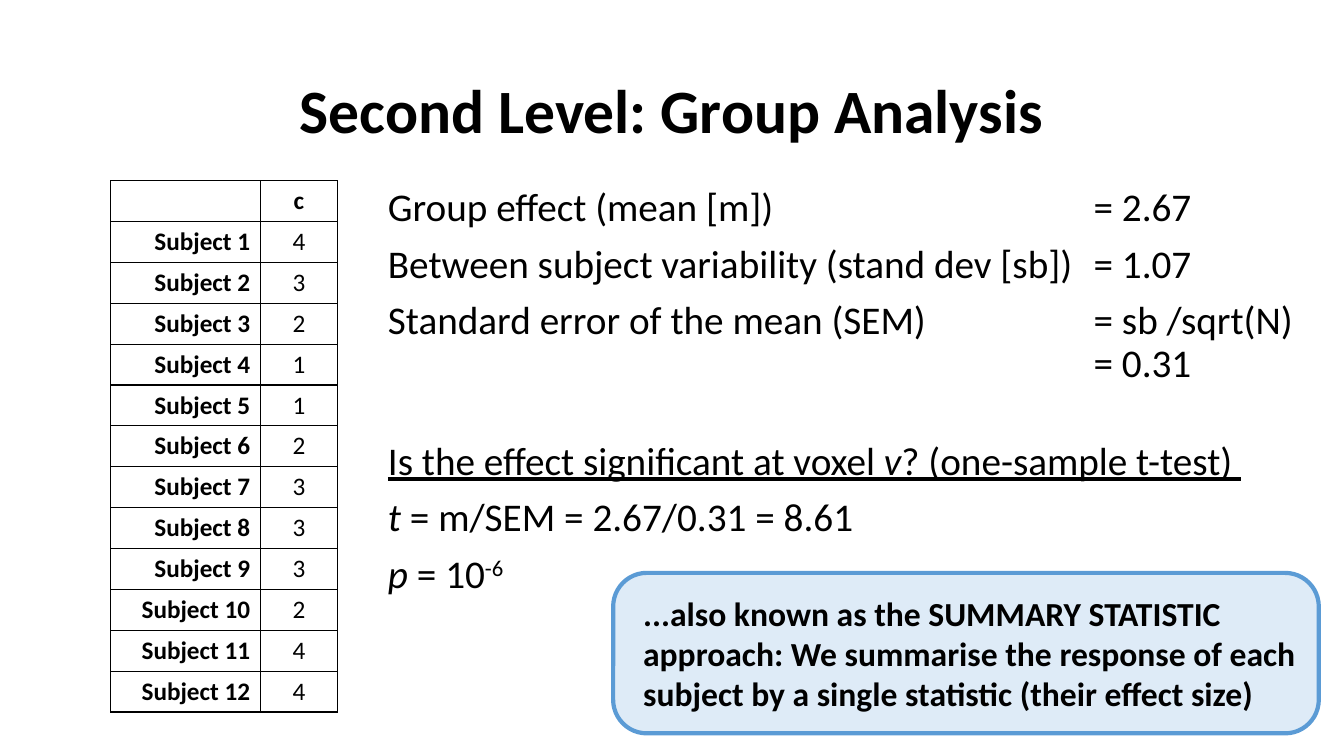
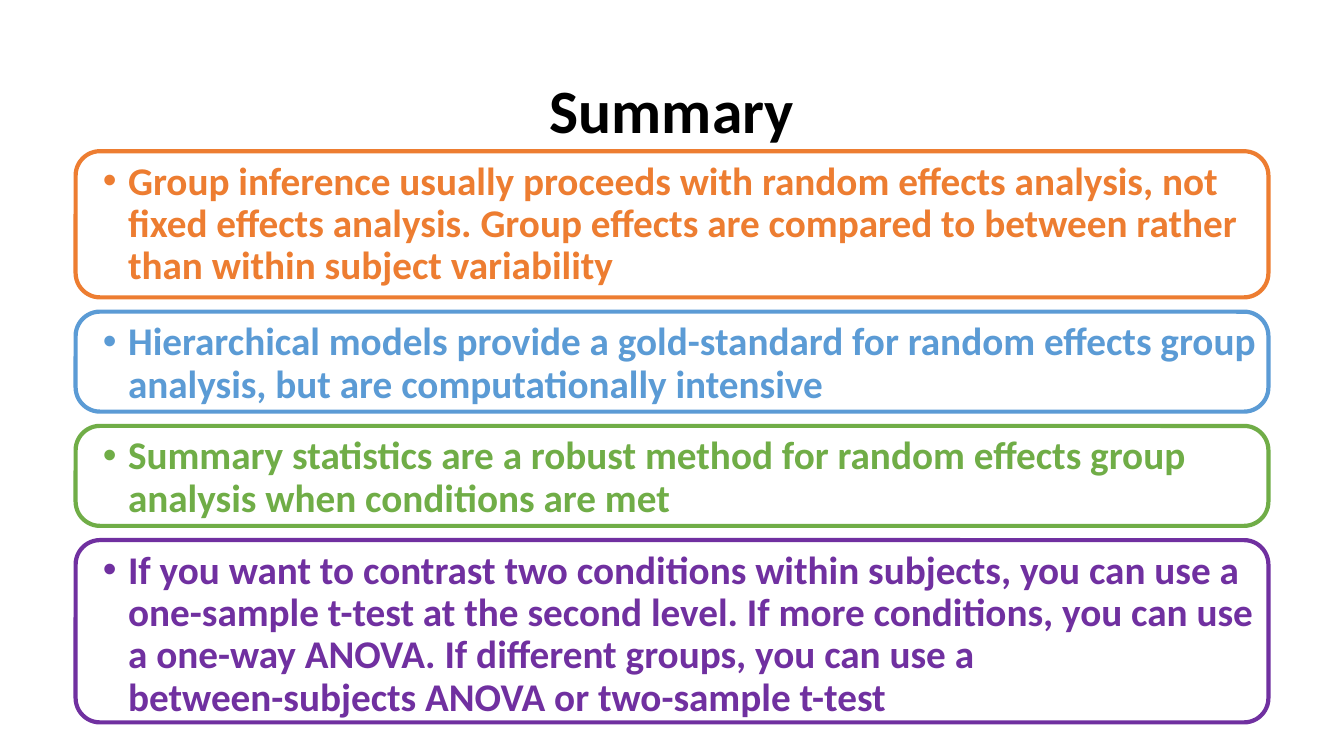
from lxml.etree import SubElement
from pptx import Presentation
from pptx.dml.color import RGBColor
from pptx.enum.shapes import MSO_SHAPE
from pptx.enum.text import MSO_ANCHOR, PP_ALIGN
from pptx.oxml.ns import qn
from pptx.util import Inches, Pt

# Shared look
COLORS = {
    "text": "000000",
    "orange": "ED7D31",
    "blue": "5B9BD5",
    "green": "70AD47",
    "purple": "7030A0",
    "pale_blue": "DEEBF7",
}
FONT = "Calibri"
TITLE_ONLY = 5
BODY_SIZE = 28

# The slide is a grid of 160 columns by 90 rows of square units
COLUMNS, ROWS = 160, 90
SLIDE_WIDTH, SLIDE_HEIGHT = Inches(13.33), Inches(7.5)
TITLE_BOX = (11, 4.8, 138, 17.4)

# Slide content: each statement is a space before and a list of (text, style)
SCORES = [4, 3, 2, 1, 1, 2, 3, 3, 3, 2, 4, 4]
STATEMENTS = [
    (10, [("Group effect (mean [m])\t= 2.67", "")]),
    (10, [("Between subject variability (stand dev [sb])\t= 1.07", "")]),
    (10, [("Standard error of the mean (SEM)\t= sb /sqrt(N)\v\t= 0.31", "")]),
    (40, [("Is the effect significant at voxel", "underline"),
          (" v", "underline italic"),
          ("? (one-sample t-test) ", "underline")]),
    (10, [("t", "italic"), (" = m/SEM = 2.67/0.31 = 8.61", "")]),
    (10, [("p", "italic"), (" = 10", ""), ("-6", "superscript")]),
]
CALLOUT = ("...also known as the SUMMARY STATISTIC approach: We summarise the "
           "response of each subject by a single statistic (their effect size)")
# Colour, height in rows, text
CARDS = [
    ("orange", 17.4, "Group inference usually proceeds with random effects analysis, "
     "not fixed effects analysis. Group effects are compared to between rather "
     "than within subject variability"),
    ("blue", 11.9, "Hierarchical models provide a gold-standard for random effects "
     "group analysis, but are computationally intensive"),
    ("green", 11.9, "Summary statistics are a robust method for random effects "
     "group analysis when conditions are met"),
    ("purple", 21.7, "If you want to contrast two conditions within subjects, you can "
     "use a one-sample t-test at the second level. If more conditions, you can "
     "use a one-way ANOVA. If different groups, you can use a \v"
     "between-subjects ANOVA or two-sample t-test"),
]


def across(columns):
    return round(SLIDE_WIDTH * columns / COLUMNS)


def down(rows):
    return round(SLIDE_HEIGHT * rows / ROWS)


def grid_box(column, row, columns, rows):
    return across(column), down(row), across(columns), down(rows)


def color(name):
    return RGBColor.from_string(COLORS[name])


def format_runs(paragraph, size, color_name="text", bold=False):
    for run in paragraph.runs:
        run.font.name = FONT
        run.font.size = Pt(size)
        run.font.bold = bold
        run.font.color.rgb = color(color_name)


def add_titled_slide(presentation, title):
    slide = presentation.slides.add_slide(presentation.slide_layouts[TITLE_ONLY])
    shape = slide.shapes.title
    shape.left, shape.top, shape.width, shape.height = grid_box(*TITLE_BOX)
    shape.text_frame.text = title
    shape.text_frame.vertical_anchor = MSO_ANCHOR.MIDDLE
    paragraph = shape.text_frame.paragraphs[0]
    paragraph.alignment = PP_ALIGN.CENTER
    paragraph.line_spacing = 0.9
    format_runs(paragraph, 44, bold=True)
    return slide


def add_rounded_box(slide, box, radius, text, size, text_color, line_color,
                    fill_color=None):
    """Add a rounded box with bold text; the radius is in grid rows."""
    shape = slide.shapes.add_shape(MSO_SHAPE.ROUNDED_RECTANGLE, *grid_box(*box))
    shape.shadow.inherit = False
    shape.adjustments[0] = radius / box[3]
    shape.line.color.rgb = color(line_color)
    shape.line.width = Pt(3)
    if fill_color:
        shape.fill.solid()
        shape.fill.fore_color.rgb = color(fill_color)
    else:
        shape.fill.background()
    frame = shape.text_frame
    frame.word_wrap = True
    frame.margin_left = Inches(0.2)
    frame.margin_right = 0
    frame.margin_top = frame.margin_bottom = Inches(0.03)
    frame.text = text
    paragraph = frame.paragraphs[0]
    paragraph.alignment = PP_ALIGN.LEFT
    format_runs(paragraph, size, text_color, bold=True)
    return frame


def add_bullet(paragraph):
    properties = paragraph._p.get_or_add_pPr()
    properties.set("marL", str(Inches(0.25)))
    properties.set("indent", str(-Inches(0.25)))
    SubElement(properties, qn("a:buFont"), typeface="Arial")
    SubElement(properties, qn("a:buChar"), char="•")


def add_tab_stop(paragraph, position):
    tabs = SubElement(paragraph._p.get_or_add_pPr(), qn("a:tabLst"))
    SubElement(tabs, qn("a:tab"), pos=str(position), algn="l")


def add_statements(slide, box, statements, tab_position):
    frame = slide.shapes.add_textbox(*grid_box(*box)).text_frame
    frame.word_wrap = True
    for index, (space_before, parts) in enumerate(statements):
        paragraph = frame.add_paragraph() if index else frame.paragraphs[0]
        paragraph.text = parts[0][0]
        for text, _ in parts[1:]:
            paragraph.add_run().text = text
        paragraph.line_spacing = 0.9
        paragraph.space_before = Pt(space_before)
        add_tab_stop(paragraph, tab_position)
        format_runs(paragraph, BODY_SIZE)
        for run, (_, style) in zip(paragraph.runs, parts):
            run.font.italic = "italic" in style
            run.font.underline = "underline" in style
            if "superscript" in style:
                run._r.get_or_add_rPr().set("baseline", "30000")


def set_borders(cell):
    properties = cell._tc.get_or_add_tcPr()
    for index, side in enumerate(("lnL", "lnR", "lnT", "lnB")):
        line = properties.makeelement(qn(f"a:{side}"), {"w": str(Pt(1))})
        fill = SubElement(line, qn("a:solidFill"))
        SubElement(fill, qn("a:srgbClr"), val=COLORS["text"])
        properties.insert(index, line)


def add_score_table(slide, column, row, widths, row_height, scores):
    rows = [("", "c")]
    rows += [(f"Subject {number}", str(score))
             for number, score in enumerate(scores, 1)]
    box = grid_box(column, row, sum(widths), row_height * len(rows))
    table = slide.shapes.add_table(len(rows), len(widths), *box).table
    table.first_row = table.horz_banding = False
    for table_column, width in zip(table.columns, widths):
        table_column.width = across(width)
    for row_index, texts in enumerate(rows):
        table.rows[row_index].height = down(row_height)
        for column_index, text in enumerate(texts):
            cell = table.cell(row_index, column_index)
            cell.fill.background()
            set_borders(cell)
            cell.vertical_anchor = MSO_ANCHOR.MIDDLE
            cell.text_frame.text = text
            paragraph = cell.text_frame.paragraphs[0]
            paragraph.alignment = PP_ALIGN.CENTER if column_index else PP_ALIGN.RIGHT
            is_header = row_index == 0 or column_index == 0
            format_runs(paragraph, 18, bold=is_header)


def add_cards(slide, column, row, columns, gap, cards):
    for color_name, rows, text in cards:
        frame = add_rounded_box(slide, (column, row, columns, rows), 2.9, text,
                                BODY_SIZE, color_name, color_name)
        frame.vertical_anchor = MSO_ANCHOR.TOP
        frame.paragraphs[0].line_spacing = 0.9
        add_bullet(frame.paragraphs[0])
        row += rows + gap


def build_group_analysis(presentation):
    slide = add_titled_slide(presentation, "Second Level: Group Analysis")
    add_statements(slide, (45, 21.8, 112, 57), STATEMENTS, across(84))
    add_score_table(slide, 13.2, 21.5, (17.8, 9.2), 4.87, SCORES)
    frame = add_rounded_box(slide, (73, 68.2, 84, 19.1), 4, CALLOUT, 24,
                            "text", "blue", "pale_blue")
    frame.vertical_anchor = MSO_ANCHOR.MIDDLE


def build_summary(presentation):
    slide = add_titled_slide(presentation, "Summary")
    add_cards(slide, 9, 18, 142, 1.7, CARDS)


def main():
    presentation = Presentation()
    presentation.slide_width = SLIDE_WIDTH
    presentation.slide_height = SLIDE_HEIGHT
    build_group_analysis(presentation)
    build_summary(presentation)
    presentation.save("out.pptx")


if __name__ == "__main__":
    main()
